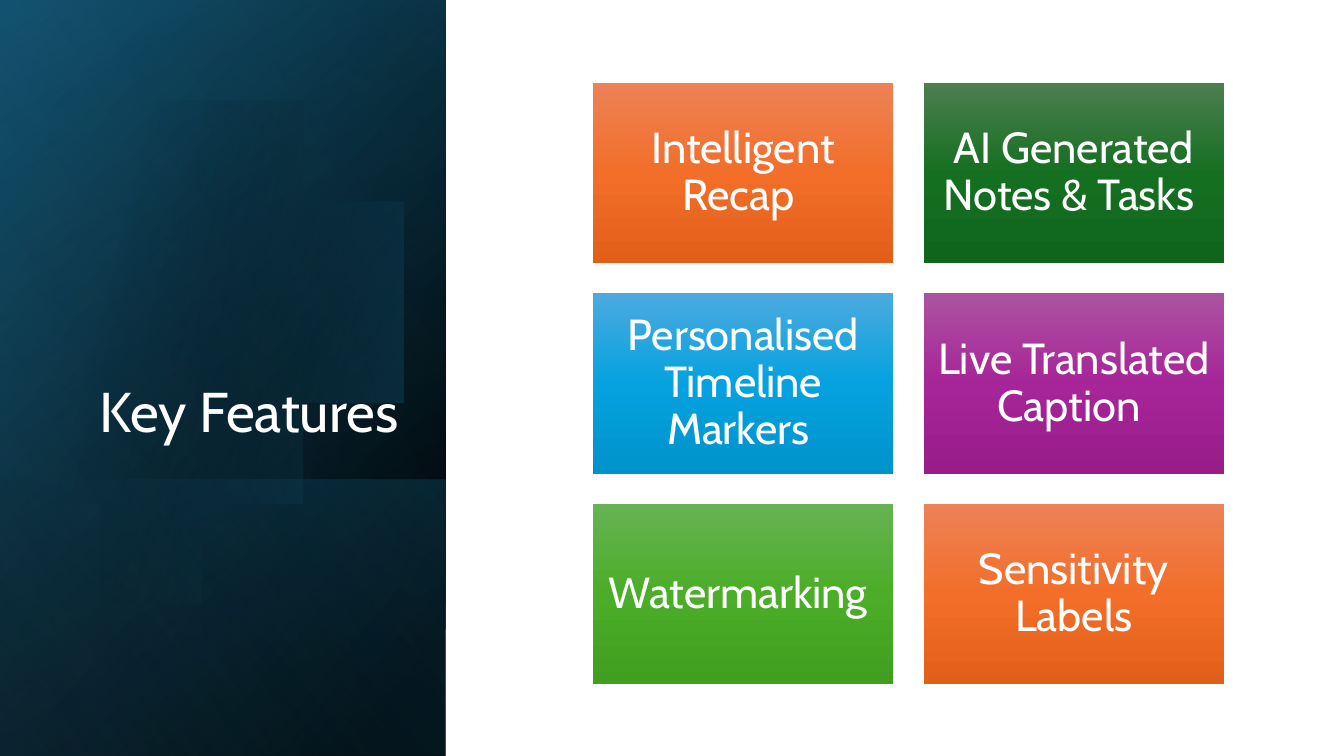
from math import acos, cos, sin

from lxml.etree import SubElement
from pptx import Presentation
from pptx.dml.color import RGBColor as RGB
from pptx.enum.shapes import MSO_SHAPE as SHAPE
from pptx.enum.text import MSO_ANCHOR as ANCHOR, PP_ALIGN as ALIGN
from pptx.oxml.ns import qn
from pptx.util import Inches, Pt

COLORS = {"black": "000000", "white": "FFFFFF", "navy": "104862",
          "teal": "156082", "sky": "46B1E1"}
TILE_COLORS = {
    "orange": ("ED8257", "F26E29", "E25F1A"),
    "forest": ("4D7E50", "156F21", "0F661B"),
    "blue": ("4CAADF", "05A2DF", "0092CB"),
    "purple": ("AC53A0", "A62598", "991C8B"),
    "green": ("66B354", "4BAD28", "409F1E"),
}
FONT = "Cabin"
SLIDE_W, SLIDE_H = 13.33, 7.5
PANEL_W = 4.42


def paint(shape, angle, stops):
    """Gradient without outline; a stop is position %, colour, opacity %."""
    shape.shadow.inherit = False
    shape.line.fill.background()
    shape.fill.gradient()
    shape.fill.gradient_angle = 360 - angle
    stop_list = shape.element.spPr.find(qn("a:gradFill")).find(qn("a:gsLst"))
    for old_stop in list(stop_list):
        stop_list.remove(old_stop)
    for position, color, opacity in stops:
        stop = SubElement(stop_list, qn("a:gs"), pos=str(position * 1000))
        rgb = SubElement(stop, qn("a:srgbClr"), val=color)
        if opacity < 100:
            SubElement(rgb, qn("a:alpha"), val=str(opacity * 1000))


def write(frame, text, size, align, anchor):
    frame.text = text
    frame.word_wrap = True
    frame.vertical_anchor = anchor
    paragraph = frame.paragraphs[0]
    paragraph.alignment = align
    paragraph.line_spacing = 0.9
    font = paragraph.runs[0].font
    font.name, font.size = FONT, Pt(size)
    font.color.rgb = RGB.from_string(COLORS["white"])


prs = Presentation()
prs.slide_width, prs.slide_height = Inches(SLIDE_W), Inches(SLIDE_H)
slide = prs.slides.add_slide(prs.slide_layouts[5])
shapes = slide.shapes

# Left panel: layered gradients, each turned a quarter and mirrored
black, teal = COLORS["black"], COLORS["teal"]
layers = [
    (SLIDE_H, 50, [(8, black, 100), (100, COLORS["navy"], 100)]),
    (SLIDE_H, 30, [(0, black, 0), (99, teal, 46)]),
    (2.74, 130, [(2, teal, 29), (100, black, 30)]),
    (SLIDE_H, 120, [(0, black, 0), (99, COLORS["sky"], 11)]),
]
for index, (height, angle, stops) in enumerate(layers):
    # The glowing disc, cut by the slide's left edge, lies under the last layer
    if index == len(layers) - 1:
        disc_x, disc_y, radius, steps = 1.43, 3.38, 2.3, 120
        reach = acos(-disc_x / radius)
        angles = [reach * (2 * step / steps - 1) for step in range(steps + 1)]
        rim = [(disc_x + radius * cos(a), disc_y + radius * sin(a)) for a in angles]
        outline = shapes.build_freeform(*rim[0], scale=Inches(1))
        outline.add_line_segments(rim[1:], close=True)
        paint(outline.convert_to_shape(), 14, [(29, black, 0), (100, teal, 43)])
    layer = shapes.add_shape(
        SHAPE.RECTANGLE, Inches((PANEL_W - height) / 2),
        Inches(SLIDE_H - (height + PANEL_W) / 2), Inches(height), Inches(PANEL_W))
    layer.rotation = 90
    layer.element.spPr.xfrm.set("flipH", "1")
    paint(layer, angle, stops)

# Title, brought in front of the panel
title = shapes.title
title.left, title.top = Inches(0.64), Inches(1.84)
title.width, title.height = Inches(3.41), Inches(2.62)
write(title.text_frame, "Key Features", 40, ALIGN.RIGHT, ANCHOR.BOTTOM)
shapes.element.append(title.element)

# Feature tiles in two columns
features = [
    ("Intelligent Recap ", "orange"),
    ("AI Generated Notes & Tasks ", "forest"),
    ("Personalised Timeline Markers ", "blue"),
    ("Live Translated Caption ", "purple"),
    ("Watermarking ", "green"),
    ("Sensitivity Labels", "orange"),
]
GRID_LEFT, GRID_TOP = 5.88, 0.82
TILE_W, TILE_H, GAP = 2.98, 1.79, 0.3
for index, (feature, color) in enumerate(features):
    row, column = divmod(index, 2)
    tile = shapes.add_shape(
        SHAPE.RECTANGLE, Inches(GRID_LEFT + column * (TILE_W + GAP)),
        Inches(GRID_TOP + row * (TILE_H + GAP)), Inches(TILE_W), Inches(TILE_H))
    paint(tile, 90, [(50 * i, shade, 100) for i, shade in enumerate(TILE_COLORS[color])])
    frame = tile.text_frame
    frame.margin_left = frame.margin_right = Inches(0.13)
    frame.margin_top = frame.margin_bottom = Inches(0.13)
    write(frame, feature, 31, ALIGN.CENTER, ANCHOR.MIDDLE)

prs.save("out.pptx")
